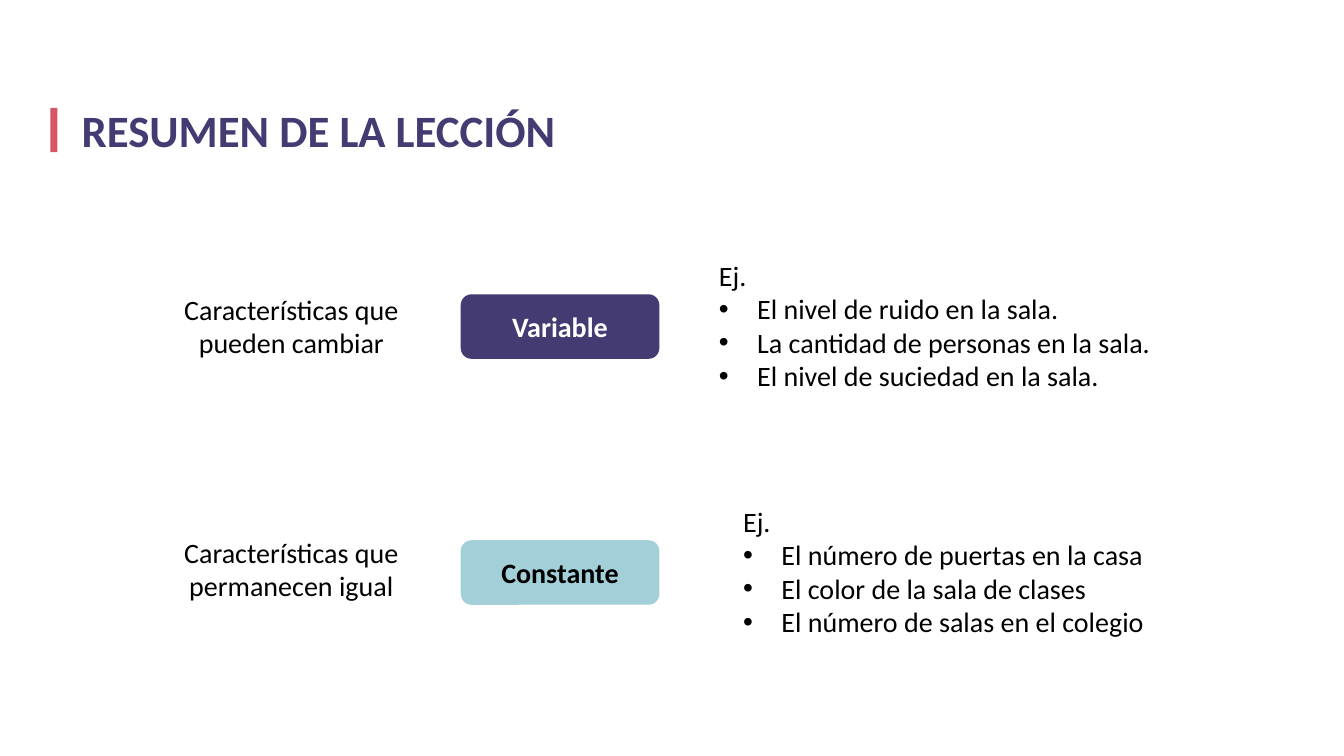
"""Build the lesson summary slide on variables and constants."""
from dataclasses import dataclass

from lxml import etree
from pptx import Presentation
from pptx.dml.color import RGBColor
from pptx.enum import shapes, text
from pptx.oxml.ns import qn
from pptx.util import Inches, Pt


@dataclass(frozen=True)
class Theme:
    font: str = "Calibri"
    title_size: int = 32
    body_size: int = 20
    purple: str = "433B71"
    red: str = "D65664"
    teal: str = "A3CFD9"
    black: str = "000000"
    white: str = "FFFFFF"


THEME = Theme()


def write(box, lines, size, color, bold=False, align=text.PP_ALIGN.LEFT,
          anchor=text.MSO_ANCHOR.TOP, bullets=False):
    frame = box.text_frame
    frame.text = "\n".join(lines)
    frame.word_wrap = True
    frame.auto_size = text.MSO_AUTO_SIZE.NONE
    frame.vertical_anchor = anchor
    for index, para in enumerate(frame.paragraphs):
        para.alignment = align
        para.space_before = Pt(0)
        if bullets:
            props = para._p.get_or_add_pPr()
            indent = Inches(0.38) if index else 0
            props.set("marL", str(indent))
            props.set("indent", str(-indent))
            if index:
                etree.SubElement(props, qn("a:buFont")).set("typeface", "Arial")
                etree.SubElement(props, qn("a:buChar")).set("char", "•")
            else:
                etree.SubElement(props, qn("a:buNone"))
        para.font.name = THEME.font
        para.font.size = Pt(size)
        para.font.bold = bold
        para.font.color.rgb = RGBColor.from_string(color)


def add_block(page, kind, left, top, width, height, fill):
    block = page.shapes.add_shape(
        kind, Inches(left), Inches(top), Inches(width), Inches(height))
    block.shadow.inherit = False
    block.fill.solid()
    block.fill.fore_color.rgb = RGBColor.from_string(fill)
    block.line.fill.background()
    return block


deck = Presentation()
deck.slide_width, deck.slide_height = Inches(13.33), Inches(7.5)
page = deck.slides.add_slide(deck.slide_layouts.get_by_name("Two Content"))
title, *lists = page.placeholders

add_block(page, shapes.MSO_SHAPE.RECTANGLE, 0.5, 1.07, 0.07, 0.44, THEME.red)
title.left, title.top = Inches(0.71), Inches(0.97)
title.width, title.height = Inches(4.95), Inches(0.64)
write(title, ["RESUMEN DE LA LECCIÓN"], THEME.title_size, THEME.purple, bold=True)
title.text_frame.word_wrap = False

concepts = [
    ("Variable", 2.92, THEME.purple, THEME.white,
     "Características que pueden cambiar", 2.85, 7.03, 2.51,
     ["El nivel de ruido en la sala.", "La cantidad de personas en la sala.",
      "El nivel de suciedad en la sala."]),
    ("Constante", 5.36, THEME.teal, THEME.black,
     "Características que permanecen igual", 5.26, 7.27, 4.95,
     ["El número de puertas en la casa", "El color de la sala de clases",
      "El número de salas en el colegio"]),
]

for examples_box, concept in zip(lists, concepts):
    (name, name_top, fill, color, meaning, meaning_top,
     examples_left, examples_top, examples) = concept

    label = add_block(page, shapes.MSO_SHAPE.ROUNDED_RECTANGLE,
                      4.57, name_top, 1.97, 0.64, fill)
    write(label, [name], THEME.body_size, color, bold=True,
          align=text.PP_ALIGN.CENTER, anchor=text.MSO_ANCHOR.MIDDLE)

    meaning_box = page.shapes.add_textbox(
        Inches(1.44), Inches(meaning_top), Inches(2.9), Inches(0.77))
    write(meaning_box, [meaning], THEME.body_size, THEME.black,
          align=text.PP_ALIGN.CENTER)

    examples_box.left, examples_box.top = Inches(examples_left), Inches(examples_top)
    examples_box.width, examples_box.height = Inches(4.88), Inches(1.45)
    write(examples_box, ["Ej.", *examples], THEME.body_size, THEME.black, bullets=True)

deck.save("out.pptx")
